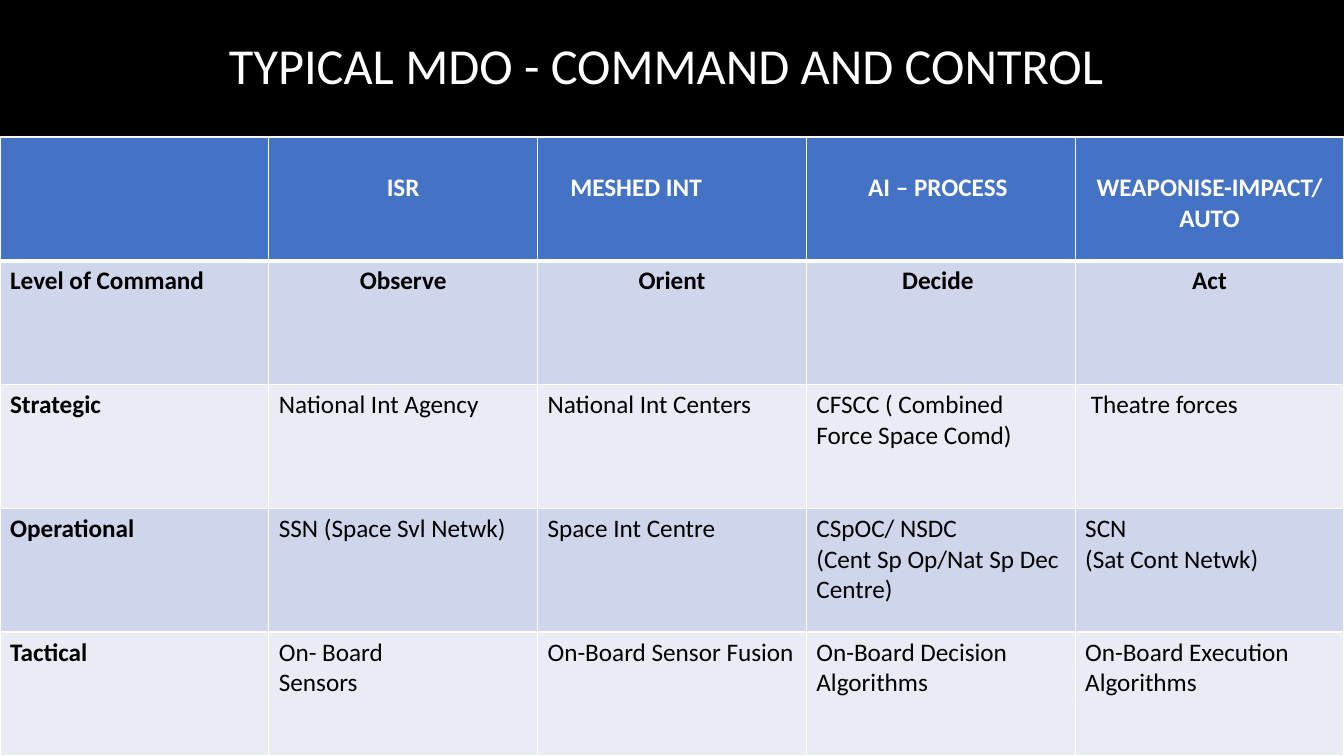
from lxml import etree
from pptx import Presentation
from pptx.dml.color import RGBColor
from pptx.enum.shapes import MSO_SHAPE
from pptx.enum.text import MSO_ANCHOR, PP_ALIGN
from pptx.oxml.ns import qn
from pptx.util import Pt

RECTANGLE = MSO_SHAPE.RECTANGLE
MIDDLE = MSO_ANCHOR.MIDDLE
LEFT, CENTER = PP_ALIGN.LEFT, PP_ALIGN.CENTER

COLORS = {
    "black": "000000",
    "white": "FFFFFF",
    "header": "4472C4",
    "band_dark": "CFD5EA",
    "band_light": "E9EBF5",
}
FONT = "Calibri"
SLIDE_WIDTH, SLIDE_HEIGHT = 960, 540
TITLE_HEIGHT = 97.8
HEADER_TOP_MARGIN = 25.6
INDENTED_HEADING = "MESHED INT"
HEADING_INDENT = 23.4

TITLE = "TYPICAL MDO - COMMAND AND CONTROL "
COMMAND_LEVELS = [
    ["", "ISR", INDENTED_HEADING, "AI – PROCESS ", "WEAPONISE-IMPACT/ AUTO"],
    ["Level of Command", "Observe", "Orient", "Decide ", "Act"],
    ["Strategic", "National Int Agency", "National Int Centers",
     "CFSCC ( Combined Force Space Comd)", " Theatre forces"],
    ["Operational", "SSN (Space Svl Netwk)", "Space Int Centre",
     "CSpOC/ NSDC\n(Cent Sp Op/Nat Sp Dec Centre)", "SCN\n(Sat Cont Netwk)"],
    ["Tactical", "On- Board\nSensors", "On-Board Sensor Fusion",
     "On-Board Decision Algorithms", "On-Board Execution Algorithms"],
]


def rgb(name):
    return RGBColor.from_string(COLORS[name])


def write(frame, text, align, color, **font_values):
    """Fill a text frame, one paragraph per line of text."""
    frame.text = text
    for paragraph in frame.paragraphs:
        paragraph.alignment = align
        paragraph.font.name = FONT
        for run in paragraph.runs:
            run.font.name = FONT
            run.font.color.rgb = rgb(color)
            for attribute, value in font_values.items():
                setattr(run.font, attribute, value)


def set_borders(cell, **widths):
    """Draw white cell edges; widths in points, keyed L, R, T, B."""
    properties = cell._tc.get_or_add_tcPr()
    for side, width in widths.items():
        line = etree.SubElement(properties, qn(f"a:ln{side}"), w=str(Pt(width)))
        fill = etree.SubElement(line, qn("a:solidFill"))
        etree.SubElement(fill, qn("a:srgbClr"), val=COLORS["white"])


def add_title_band(slide, left, top, width, height):
    band = slide.shapes.add_shape(RECTANGLE, Pt(left), Pt(top), Pt(width), Pt(height))
    band.shadow.inherit = False
    band.fill.solid()
    band.fill.fore_color.rgb = rgb("black")
    band.line.fill.background()
    frame = band.text_frame
    frame.word_wrap = True
    frame.vertical_anchor = MIDDLE
    write(frame, TITLE, CENTER, "white", size=Pt(36), bold=False)
    frame.paragraphs[0].line_spacing = 0.9


def add_command_table(slide, left, top, width, height):
    row_count, column_count = len(COMMAND_LEVELS), len(COMMAND_LEVELS[0])
    table = slide.shapes.add_table(row_count, column_count, Pt(left), Pt(top),
                                   Pt(width), Pt(height)).table
    for column in table.columns:
        column.width = Pt(width / column_count)
    for row in table.rows:
        row.height = Pt(height / row_count)

    for r, level in enumerate(COMMAND_LEVELS):
        is_header = r == 0
        band = "header" if is_header else ("band_dark" if r % 2 else "band_light")
        for c, text in enumerate(level):
            cell = table.cell(r, c)
            set_borders(cell, L=1, R=1, T=3 if r == 1 else 1, B=3 if is_header else 1)
            cell.fill.solid()
            cell.fill.fore_color.rgb = rgb(band)
            if is_header:
                cell.margin_top = Pt(HEADER_TOP_MARGIN)
            indented = text == INDENTED_HEADING
            if indented:
                cell.margin_left = Pt(HEADING_INDENT)
            centered = r < 2 and c > 0 and not indented
            write(cell.text_frame, text, CENTER if centered else LEFT,
                  "white" if is_header else "black",
                  size=Pt(18), bold=r < 2 or c == 0)


def main():
    deck = Presentation()
    deck.slide_width, deck.slide_height = Pt(SLIDE_WIDTH), Pt(SLIDE_HEIGHT)
    slide = deck.slides.add_slide(deck.slide_layouts[6])
    add_title_band(slide, 0, 0, SLIDE_WIDTH, TITLE_HEIGHT)
    add_command_table(slide, 0, TITLE_HEIGHT, SLIDE_WIDTH, SLIDE_HEIGHT - TITLE_HEIGHT)
    deck.save("out.pptx")


if __name__ == "__main__":
    main()
